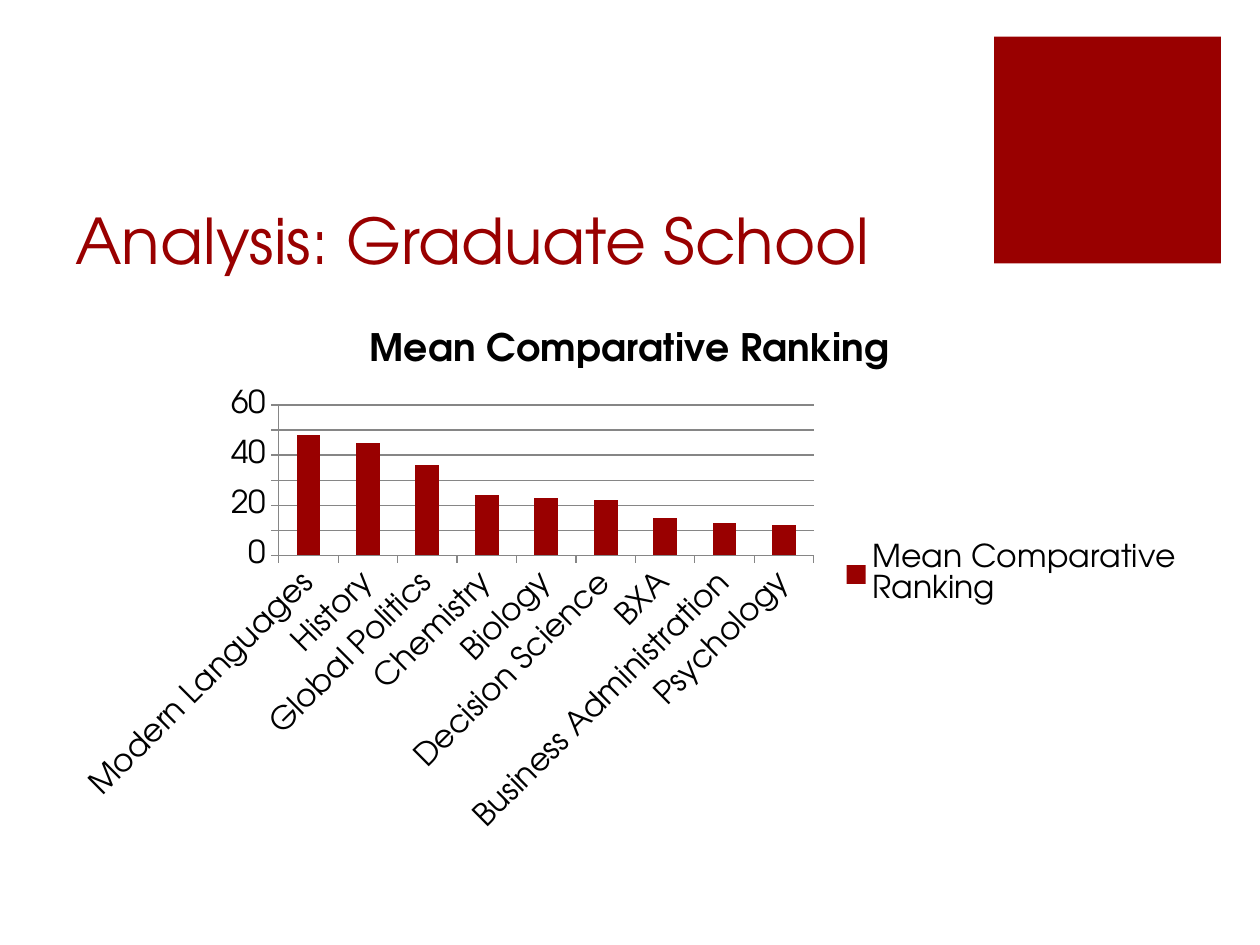
from pptx import Presentation
from pptx.chart.data import CategoryChartData
from pptx.dml.color import RGBColor
from pptx.enum.chart import XL_CHART_TYPE, XL_LEGEND_POSITION, XL_TICK_MARK
from pptx.enum.shapes import MSO_SHAPE
from pptx.enum.text import MSO_ANCHOR
from pptx.util import Inches, Pt

# Content
TITLE = "Analysis: Graduate School"
SERIES_NAME = "Mean Comparative Ranking"
RANKINGS = [
    ("Modern Languages", 48),
    ("History", 45),
    ("Global Politics", 36),
    ("Chemistry", 24),
    ("Biology", 23),
    ("Decision Science", 22),
    ("BXA", 15),
    ("Business Administration", 13),
    ("Psychology", 12),
]

# Format
FONT = "TeX Gyre Adventor"
COLORS = {"accent": "990000", "text": "000000", "grid": "868686"}
WIDTH, HEIGHT = 10, 7.5
MARGIN = WIDTH * 0.05
SQUARE_SIDE = WIDTH * 0.18
SQUARE = (7.89, 0.29, SQUARE_SIDE, SQUARE_SIDE)
TITLE_BOX = (MARGIN, 1, 7.12, HEIGHT / 6)
CHART_BOX = (MARGIN, 2.42, WIDTH - 2 * MARGIN, 4.28)


def inches(box):
    return [Inches(length) for length in box]


def color(name):
    return RGBColor.from_string(COLORS[name])


def format_font(font, size, color_name="text", bold=False):
    font.name = FONT
    font.size = Pt(size)
    font.bold = bold
    font.color.rgb = color(color_name)


def add_text(slide, text, box, size, color_name="text", bold=False,
             anchor=MSO_ANCHOR.TOP):
    frame = slide.shapes.add_textbox(*inches(box)).text_frame
    frame.word_wrap = True
    frame.vertical_anchor = anchor
    run = frame.paragraphs[0].add_run()
    run.text = text
    format_font(run.font, size, color_name, bold)


def add_ranking_chart(slide):
    data = CategoryChartData()
    data.categories = [name for name, _ in RANKINGS]
    data.add_series(SERIES_NAME, [value for _, value in RANKINGS])
    chart = slide.shapes.add_chart(
        XL_CHART_TYPE.COLUMN_CLUSTERED, *inches(CHART_BOX), data).chart
    format_font(chart.font, 18)

    # Chart title and legend
    chart.has_title = True
    chart.chart_title.include_in_layout = False
    run = chart.chart_title.text_frame.paragraphs[0].add_run()
    run.text = SERIES_NAME
    format_font(run.font, 21.6, bold=True)
    chart.has_legend = True
    chart.legend.position = XL_LEGEND_POSITION.RIGHT
    chart.legend.include_in_layout = False

    # Columns
    plot = chart.plots[0]
    plot.gap_width = 150
    plot.vary_by_categories = False
    fill = plot.series[0].format.fill
    fill.solid()
    fill.fore_color.rgb = color("accent")

    # Axes and gridlines
    value_axis = chart.value_axis
    value_axis.minimum_scale, value_axis.maximum_scale = 0, 60
    value_axis.major_unit = 10
    value_axis.has_major_gridlines = True
    for axis in (chart.category_axis, value_axis):
        axis.major_tick_mark = XL_TICK_MARK.OUTSIDE
        axis.minor_tick_mark = XL_TICK_MARK.NONE
    for part in (chart.category_axis, value_axis, value_axis.major_gridlines):
        part.format.line.color.rgb = color("grid")
        part.format.line.width = Pt(0.75)


def main():
    presentation = Presentation()
    presentation.slide_width = Inches(WIDTH)
    presentation.slide_height = Inches(HEIGHT)
    slide = presentation.slides.add_slide(presentation.slide_layouts[6])

    # Corner square
    square = slide.shapes.add_shape(MSO_SHAPE.RECTANGLE, *inches(SQUARE))
    square.shadow.inherit = False
    square.fill.solid()
    square.fill.fore_color.rgb = color("accent")
    square.line.fill.background()

    # Title and chart
    add_text(slide, TITLE, TITLE_BOX, 36, "accent", anchor=MSO_ANCHOR.BOTTOM)
    add_ranking_chart(slide)
    presentation.save("out.pptx")


if __name__ == "__main__":
    main()
